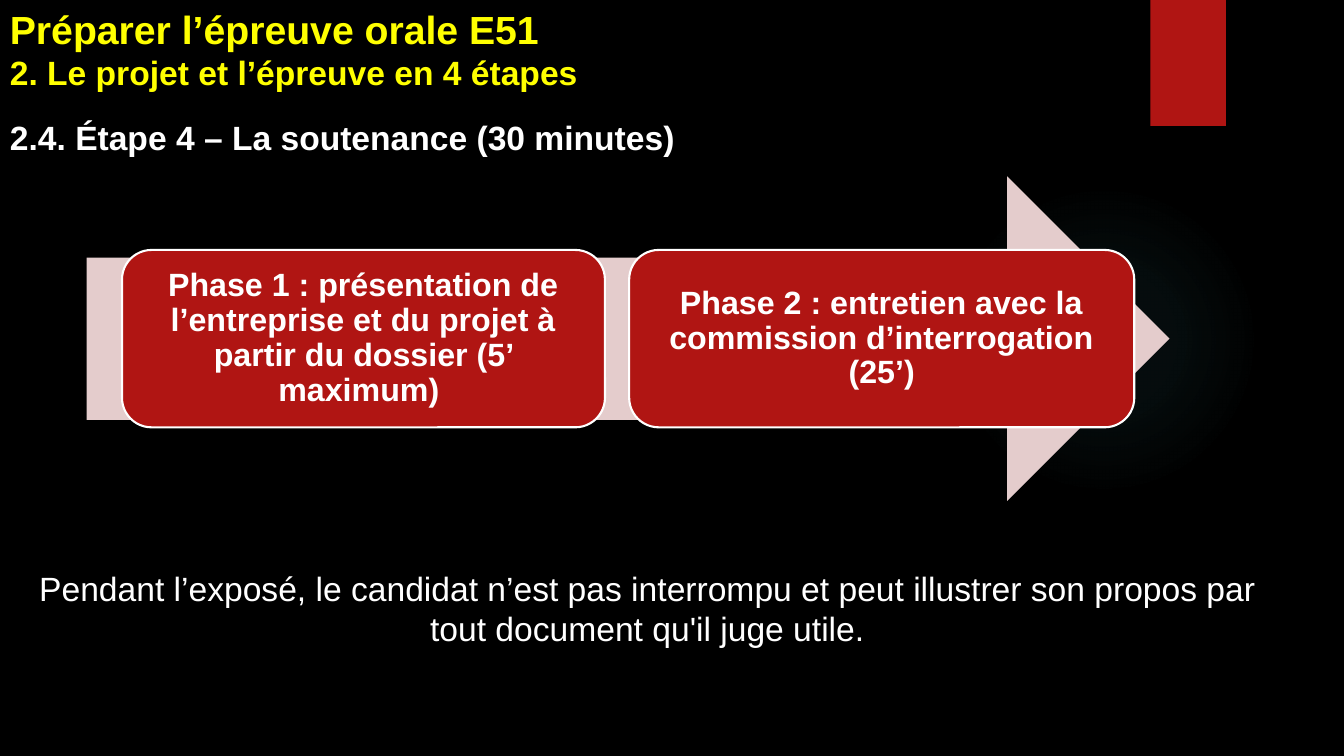
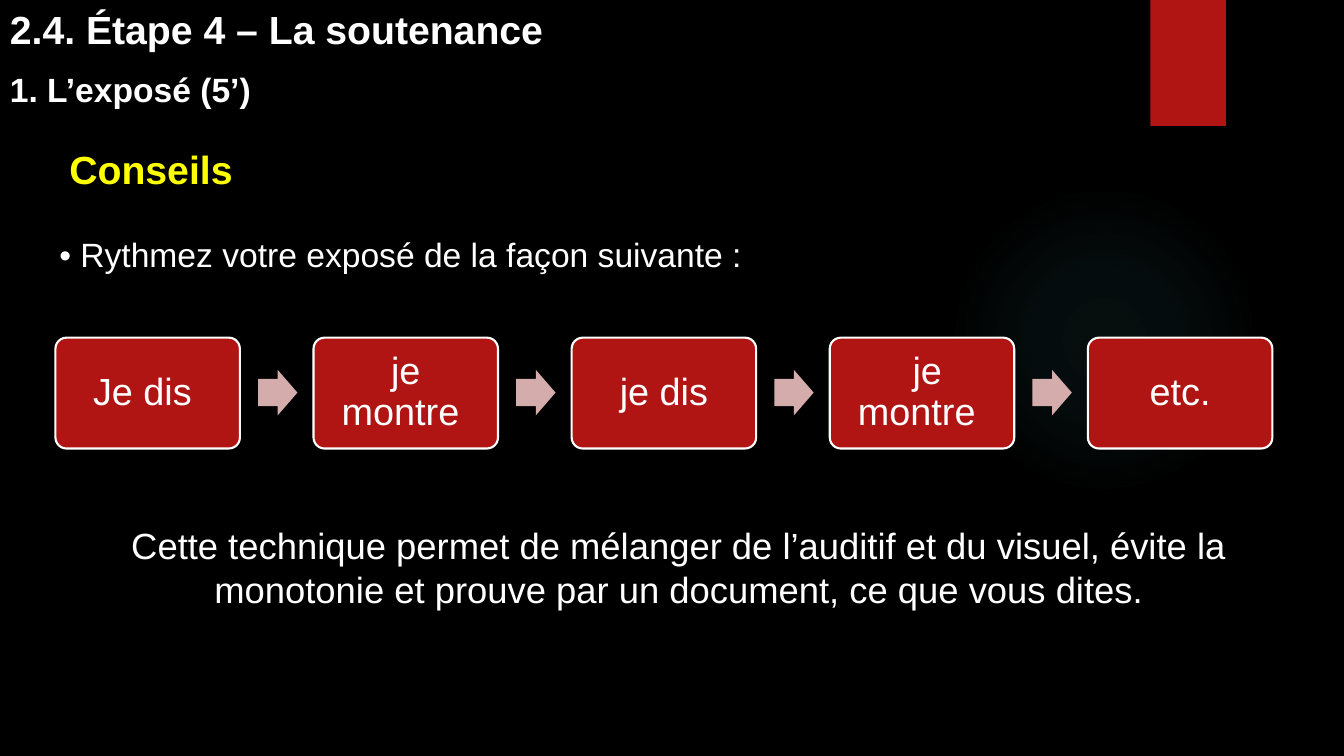
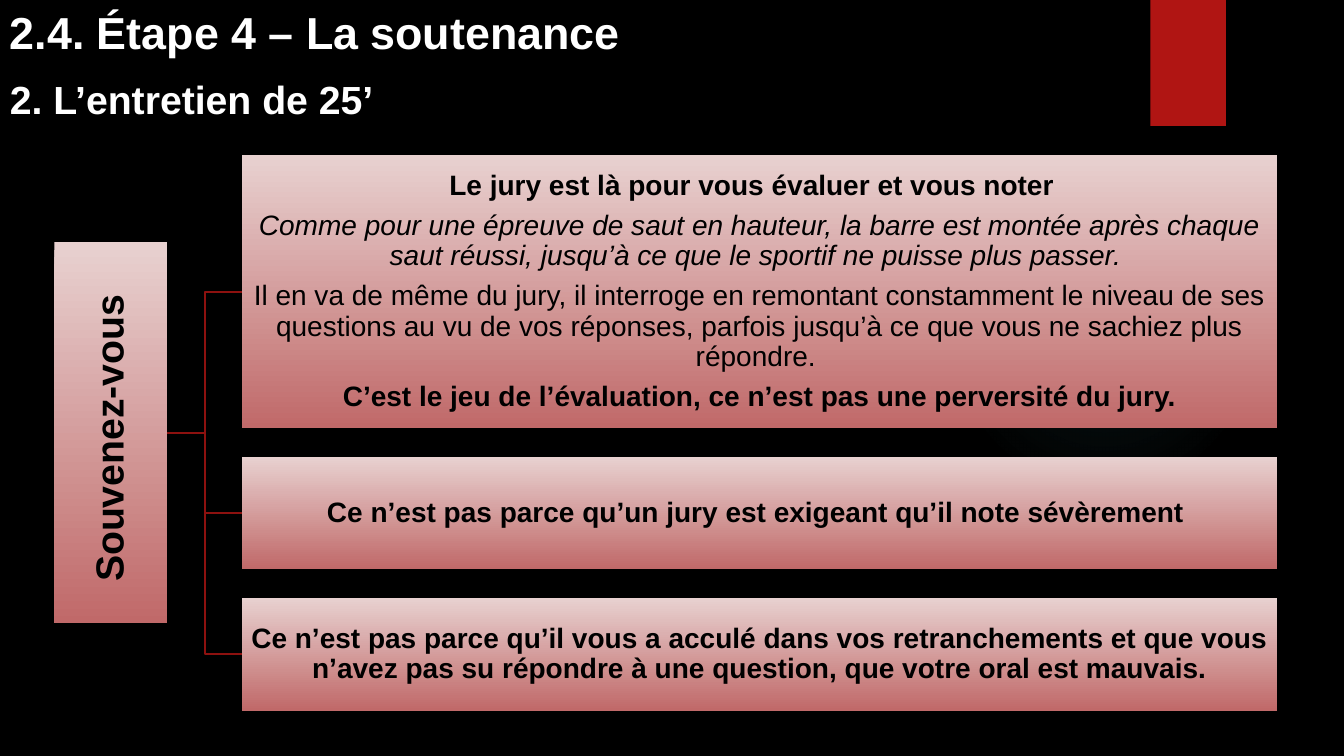
"""Build three slides on the oral defence: its phases, the talk and the interview."""
import lxml.etree
import pptx
import pptx.dml.color
import pptx.enum.dml
import pptx.enum.shapes
import pptx.enum.text
import pptx.oxml
import pptx.oxml.ns
import pptx.util

Inches = pptx.util.Inches
Pt = pptx.util.Pt
RGBColor = pptx.dml.color.RGBColor
SHAPE = pptx.enum.shapes.MSO_SHAPE
ALIGN = pptx.enum.text.PP_ALIGN
ANCHOR = pptx.enum.text.MSO_ANCHOR

FONT = "Arial"
BLACK = RGBColor(0x00, 0x00, 0x00)
WHITE = RGBColor(0xFF, 0xFF, 0xFF)
YELLOW = RGBColor(0xFF, 0xFF, 0x00)
RED = RGBColor(0xB0, 0x15, 0x13)
DARK_RED = RGBColor(0x8D, 0x11, 0x0F)
PALE_PINK = RGBColor(0xE4, 0xCC, 0xCC)
PINK = RGBColor(0xD4, 0xAC, 0xAB)
GRADIENT = (RGBColor(0xE8, 0xD1, 0xD0), RGBColor(0xC0, 0x69, 0x69))
GLOW = RGBColor(0x50, 0xB9, 0xC1)
GLOW_STOPS = [(0, 7), (36, 6), (69, 0)]

PROJECT_TITLE = [
    ("Préparer l’épreuve orale E51", {"size": 28}),
    ("2. Le projet et l’épreuve en 4 étapes", {"size": 24}),
]
PHASES_TITLE = "2.4. Étape 4 – La soutenance (30 minutes)"
PHASES = [
    (1.21, 4.79, "Phase 1 : présentation de l’entreprise et du projet à partir du dossier (5’ maximum) "),
    (6.24, 5.01, "Phase 2 : entretien avec la commission d’interrogation (25’)"),
]
PHASES_NOTE = (
    "Pendant l’exposé, le candidat n’est pas interrompu et peut illustrer son propos "
    "par tout document qu'il juge utile."
)

TALK_TITLE = [
    ("2.4. Étape 4 – La soutenance", {"size": 28}),
    ("1. L’exposé (5’)", {"size": 24}),
]
ADVICE = "Conseils"
RHYTHM = "• Rythmez votre exposé de la façon suivante :"
STEPS = ["Je dis ", "je montre ", "je dis", " je montre ", "etc."]
TALK_NOTE = (
    "Cette technique permet de mélanger de l’auditif et du visuel, évite la monotonie "
    "et prouve par un document, ce que vous dites."
)

INTERVIEW_TITLE = [
    ("2.4. Étape 4 – La soutenance", {"size": 32}),
    ("2. L’entretien de 25’", {"size": 28}),
]
REMINDER = "Souvenez-vous "
REMARKS = [
    (2.71, [
        ("Le jury est là pour vous évaluer et vous noter  ", {"bold": True}),
        ("Comme pour une épreuve de saut en hauteur, la barre est montée après chaque saut "
         "réussi, jusqu’à ce que le sportif ne puisse plus passer. ", {"italic": True}),
        ("Il en va de même du jury, il interroge en remontant constamment le niveau de ses "
         "questions au vu de vos réponses, parfois jusqu’à ce que vous ne sachiez plus "
         "répondre. ", {}),
        ("C’est le jeu de l’évaluation, ce n’est pas une perversité du jury.", {"bold": True}),
    ]),
    (1.12, [("Ce n’est pas parce qu’un jury est exigeant qu’il note sévèrement ", {"bold": True})]),
    (1.12, [("Ce n’est pas parce qu’il vous a acculé dans vos retranchements et que vous n’avez "
             "pas su répondre à une question, que votre oral est mauvais.", {"bold": True})]),
]


def write_text(shape, text, size=24, color=WHITE, bold=False, italic=False, align=ALIGN.LEFT,
               anchor=ANCHOR.TOP, gap=0, line_spacing=None, margins=(0.1, 0.05)):
    """Write a string, or (string, format) paragraphs, into a shape."""
    frame = shape.text_frame
    frame.word_wrap = True
    frame.vertical_anchor = anchor
    frame.margin_left = frame.margin_right = Inches(margins[0])
    frame.margin_top = frame.margin_bottom = Inches(margins[1])
    paragraphs = [(text, {})] if isinstance(text, str) else text
    for index, (words, changes) in enumerate(paragraphs):
        paragraph = frame.add_paragraph() if index else frame.paragraphs[0]
        paragraph.alignment = align
        if index:
            paragraph.space_before = Pt(gap)
        if line_spacing:
            paragraph.line_spacing = line_spacing
        run = paragraph.add_run()
        run.text = words
        run.font.name = FONT
        run.font.size = Pt(changes.get("size", size))
        run.font.bold = changes.get("bold", bold)
        run.font.italic = changes.get("italic", italic)
        run.font.color.rgb = color


def add_text(slide, box, text, **text_format):
    """Add a text box."""
    shape = slide.shapes.add_textbox(*map(Inches, box))
    write_text(shape, text, **text_format)


def add_shape(slide, kind, box, fill=None, line=None, adjustments=()):
    """Add a flat preset shape."""
    shape = slide.shapes.add_shape(kind, *map(Inches, box))
    shape.shadow.inherit = False
    for index, value in enumerate(adjustments):
        shape.adjustments[index] = value
    if fill is not None:
        shape.fill.solid()
        shape.fill.fore_color.rgb = fill
    if line is None:
        shape.line.fill.background()
    else:
        shape.line.color.rgb = line
        shape.line.width = Pt(1.5)
    return shape


def add_card(slide, box, text, margin, adjustments=(), **text_format):
    """Add a red rounded card with centred text."""
    card = add_shape(slide, SHAPE.ROUNDED_RECTANGLE, box, RED, WHITE, adjustments)
    write_text(card, text, align=ALIGN.CENTER, anchor=ANCHOR.MIDDLE, line_spacing=0.9,
               margins=(margin, margin), **text_format)


def add_gradient_panel(slide, box, text, margin, **text_format):
    """Add a pink gradient panel with centred black text."""
    panel = add_shape(slide, SHAPE.RECTANGLE, box)
    panel.fill.gradient()
    panel.fill.gradient_angle = 270
    for stop, color, position in zip(panel.fill.gradient_stops, GRADIENT, (0, 1)):
        stop.color.rgb = color
        stop.position = position
    write_text(panel, text, color=BLACK, align=ALIGN.CENTER, anchor=ANCHOR.MIDDLE,
               line_spacing=0.9, margins=(margin, margin), **text_format)
    return panel


def add_glow(slide):
    """Add the faint radial glow."""
    glow = add_shape(slide, SHAPE.OVAL, (9.41, 1.83, 3.08, 3.08), GLOW)
    stops = "".join(
        f'<a:gs pos="{position * 1000}"><a:srgbClr val="{GLOW}">'
        f'<a:alpha val="{alpha * 1000}"/></a:srgbClr></a:gs>'
        for position, alpha in GLOW_STOPS
    )
    gradient = pptx.oxml.parse_xml(
        f'<a:gradFill {pptx.oxml.ns.nsdecls("a")}><a:gsLst>{stops}</a:gsLst><a:path path="circle">'
        '<a:fillToRect l="50000" t="50000" r="50000" b="50000"/></a:path></a:gradFill>'
    )
    properties = glow.element.spPr
    properties.replace(properties.find(pptx.oxml.ns.qn("a:solidFill")), gradient)


def add_branch(slide, start, end):
    """Add an elbow line between two points."""
    branch = slide.shapes.add_connector(
        pptx.enum.shapes.MSO_CONNECTOR.ELBOW, *map(Inches, start + end))
    branch.line.color.rgb = DARK_RED
    branch.line.width = Pt(1.5)
    lxml.etree.SubElement(branch.element.spPr, pptx.oxml.ns.qn("a:effectLst"))


def add_base_slide(presentation, title, **title_format):
    """Add a slide with the glow, the red band and the title."""
    slide = presentation.slides.add_slide(presentation.slide_layouts[6])
    add_glow(slide)
    add_shape(slide, SHAPE.RECTANGLE, (11.41, 0, 0.75, 1.25), RED)
    add_text(slide, (0, 0, 10.44, 1.14), title, bold=True, **title_format)
    return slide


def build_phases(presentation):
    """Build the slide of the two phases."""
    slide = add_base_slide(presentation, PROJECT_TITLE, color=YELLOW)
    add_text(slide, (0, 1.11, 12.75, 0.5), PHASES_TITLE, bold=True)
    add_shape(slide, SHAPE.RIGHT_ARROW, (0.86, 1.75, 10.74, 3.22), PALE_PINK)
    for left, width, text in PHASES:
        add_card(slide, (left, 2.48, width, 1.76), text, 0.1, size=23, bold=True)
    add_text(slide, (0.29, 5.58, 12.26, 0.91), PHASES_NOTE, align=ALIGN.CENTER)


def build_talk(presentation):
    """Build the slide of the talk and its rhythm."""
    slide = add_base_slide(presentation, TALK_TITLE, gap=12)
    add_text(slide, (0.49, 2.27, 12.5, 0.5), RHYTHM)
    add_text(slide, (0.59, 1.39, 7.04, 0.57), ADVICE, size=28, color=YELLOW, bold=True)
    pitch = 2.56
    for index, text in enumerate(STEPS):
        left = 0.55 + index * pitch
        if index:
            add_shape(slide, SHAPE.RIGHT_ARROW, (left - 0.55, 3.67, 0.39, 0.45), PINK,
                      adjustments=(0.6, 0.5))
        add_card(slide, (left, 3.35, 1.83, 1.1), text, 0.11, (0.1,), size=27)
    add_text(slide, (0.49, 5.14, 12.5, 0.98), TALK_NOTE, size=26, align=ALIGN.CENTER)


def build_interview(presentation):
    """Build the slide of the interview and its reminders."""
    slide = add_base_slide(presentation, INTERVIEW_TITLE, gap=12)
    root_left, root_width, root_height = 0.54, 1.12, 3.78
    left, top, width, gap = 2.4, 1.54, 10.27, 0.28
    total = sum(height for height, _ in REMARKS) + gap * (len(REMARKS) - 1)
    middle = top + total / 2
    for height, paragraphs in REMARKS:
        add_branch(slide, (root_left + root_width, middle), (left, top + height / 2))
        add_gradient_panel(slide, (left, top, width, height), paragraphs, 0.01, size=20, gap=7)
        top += height + gap
    root = add_gradient_panel(
        slide, (root_left, middle - root_height / 2, root_width, root_height),
        REMINDER, 0.02, size=28, bold=True)
    root.text_frame._txBody.bodyPr.set("vert", "vert270")


def main():
    """Build and save the presentation."""
    presentation = pptx.Presentation()
    presentation.slide_width = Inches(13.33)
    presentation.slide_height = Inches(7.5)
    background = presentation.slide_master.background.fill
    background.solid()
    background.fore_color.rgb = BLACK
    build_phases(presentation)
    build_talk(presentation)
    build_interview(presentation)
    presentation.save("out.pptx")


if __name__ == "__main__":
    main()
